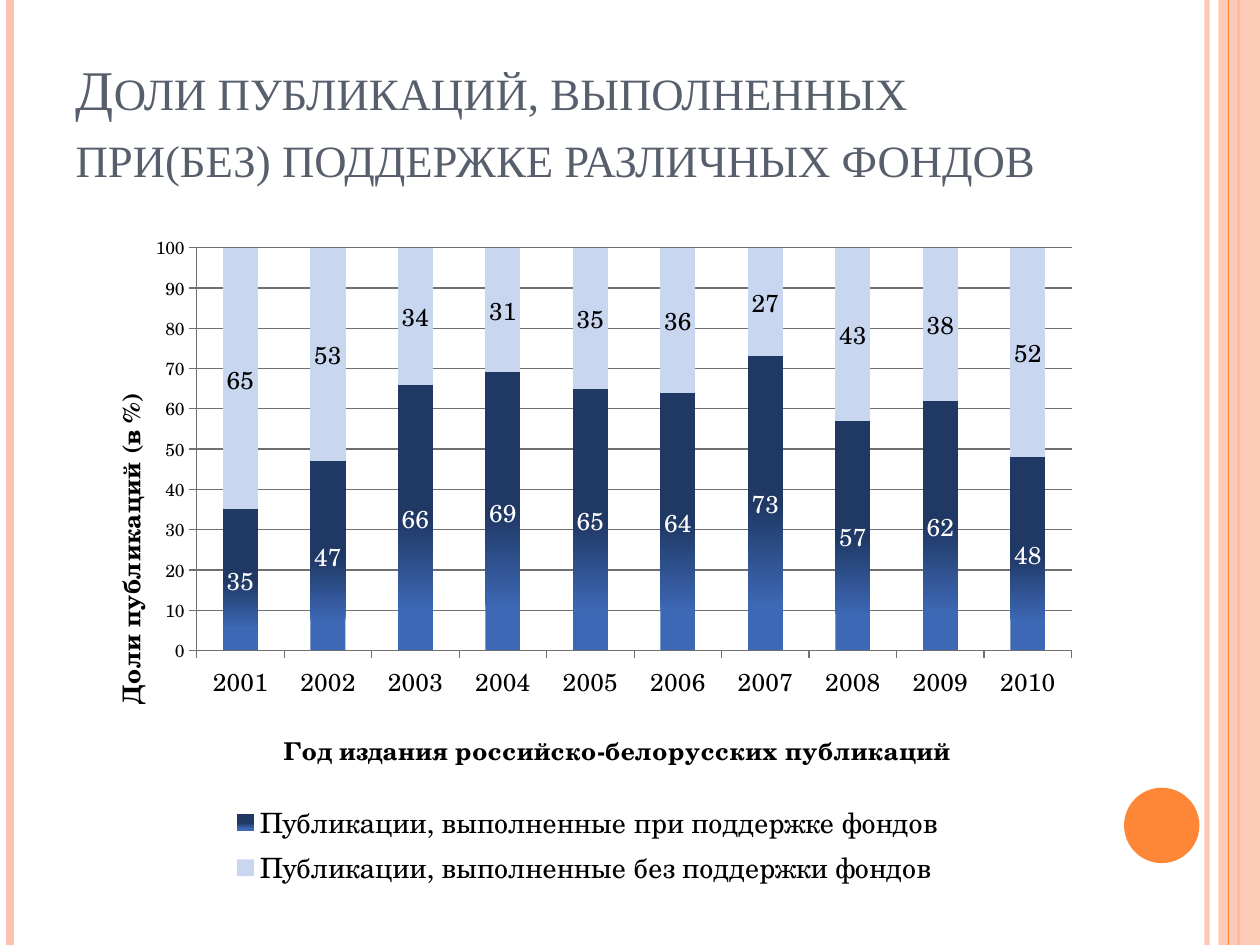
from pptx import Presentation
from pptx import util as u
from pptx.chart.data import CategoryChartData
from pptx.dml.color import RGBColor
from pptx.enum import chart as charts, shapes, text
from pptx.oxml import parse_xml
from pptx.oxml.ns import nsdecls, qn
from pptx.oxml.xmlchemy import OxmlElement

Cm, Pt = u.Cm, u.Pt
COLORS = {
    "peach": "FEC3AE", "orange": "FE8637", "title": "575F6D",
    "navy": "1F3864", "blue": "3D68B5", "pale": "C8D6F0",
    "grid": "707070", "black": "000000", "white": "FFFFFF",
}
CHART_FONT = "TeX Gyre Schola"
PAGE_HEIGHT = 19.05
STRIPES = [  # x in cm, colour, width in points, opacity in percent
    (24.33, "peach", 3, 93),
    (0.2, "peach", 4.5, 100),
    (24.97, "orange", 1.5, 100),
    (24.77, "orange", 0.75, 100),
]
SUPPORTED = [35, 47, 66, 69, 65, 64, 73, 57, 62, 48]


def rgb(name):
    return RGBColor.from_string(COLORS[name])


def set_opacity(shape, percent):
    for color in shape._element.spPr.iter(qn("a:srgbClr")):
        alpha = OxmlElement("a:alpha")
        alpha.set("val", str(percent * 1000))
        color.append(alpha)


def add_stripe(page, x, color, width, opacity):
    line = page.shapes.add_connector(
        shapes.MSO_CONNECTOR.STRAIGHT, Cm(x), 0, Cm(x), Cm(PAGE_HEIGHT))
    line.line.color.rgb = rgb(color)
    line.line.width = Pt(width)
    if opacity < 100:
        set_opacity(line, opacity)
    line._element.spPr.append(OxmlElement("a:effectLst"))


def add_plain_shape(page, kind, left, top, width, height, color):
    shape = page.shapes.add_shape(kind, Cm(left), Cm(top), Cm(width), Cm(height))
    shape.shadow.inherit = False
    shape.fill.solid()
    shape.fill.fore_color.rgb = rgb(color)
    shape.line.fill.background()
    return shape


def set_title(page, wording):
    title = page.shapes.title
    title.left, title.top, title.width, title.height = (
        Cm(1.27), Cm(0.76), Cm(20.75), Cm(3.18))
    frame = title.text_frame
    frame.word_wrap = True
    frame.auto_size = text.MSO_AUTO_SIZE.NONE
    frame.vertical_anchor = text.MSO_ANCHOR.BOTTOM
    para = frame.paragraphs[0]
    para.alignment = text.PP_ALIGN.LEFT
    span = para.add_run()
    span.text = wording
    style_font(span.font, 32, "title", name="Times New Roman")
    span.font._element.set("cap", "small")


def style_font(font, size, color="black", bold=False, name=CHART_FONT):
    font.name, font.size, font.bold = name, Pt(size), bold
    font.color.rgb = rgb(color)


def place(element, index, inner=False, **fractions):
    """Give a chart part a manual layout in fractions of the chart."""
    for old in element.findall(qn("c:layout")):
        element.remove(old)
    target = '<c:layoutTarget val="inner"/>' if inner else ""
    modes = "".join(f'<c:{key}Mode val="edge"/>' for key in "xy")
    values = "".join(f'<c:{key} val="{val}"/>' for key, val in fractions.items())
    element.insert(index, parse_xml(
        f'<c:layout {nsdecls("c")}><c:manualLayout>{target}{modes}{values}'
        "</c:manualLayout></c:layout>"))


def style_axis(axis, size, wording, x, y):
    axis.major_tick_mark = charts.XL_TICK_MARK.OUTSIDE
    axis.minor_tick_mark = charts.XL_TICK_MARK.NONE
    axis.format.line.color.rgb = rgb("grid")
    style_font(axis.tick_labels.font, size)
    span = axis.axis_title.text_frame.paragraphs[0].add_run()
    span.text = wording
    style_font(span.font, 14, bold=True)
    place(axis.axis_title._element, 1, x=x, y=y)


def style_series(series, label_color):
    labels = series.data_labels
    labels.show_value = True
    labels.position = charts.XL_LABEL_POSITION.CENTER
    style_font(labels.font, 14, label_color)


def add_share_chart(page):
    data = CategoryChartData()
    data.categories = [str(year) for year in range(2001, 2011)]
    data.add_series("Публикации, выполненные при поддержке фондов", SUPPORTED)
    data.add_series("Публикации, выполненные без поддержки фондов",
                    [100 - share for share in SUPPORTED])
    chart = page.shapes.add_chart(
        charts.XL_CHART_TYPE.COLUMN_STACKED,
        Cm(1.27), Cm(4.45), Cm(20.75), Cm(13.54), data).chart
    chart.has_title = False
    style_font(chart.font, 10)
    place(chart._chartSpace.chart.plotArea, 0, inner=True,
          x=0.13, y=0.04, w=0.85, h=0.6)

    plot = chart.plots[0]
    plot.gap_width, plot.overlap, plot.vary_by_categories = 150, 100, False
    supported, unsupported = plot.series
    style_series(supported, "white")
    style_series(unsupported, "black")
    fill = supported.format.fill
    fill.gradient()
    fill.gradient_angle = 90
    for stop, color, position in zip(
            fill.gradient_stops, ("blue", "navy"), (0.15, 0.5)):
        stop.color.rgb, stop.position = rgb(color), position
    unsupported.format.fill.solid()
    unsupported.format.fill.fore_color.rgb = rgb("pale")

    style_axis(chart.category_axis, 14,
               "Год издания российско-белорусских публикаций", 0.21, 0.75)
    shares = chart.value_axis
    style_axis(shares, 10, "Доли публикаций (в %)", 0.04, 0.25)
    shares.minimum_scale, shares.maximum_scale, shares.major_unit = 0, 100, 10
    shares.has_major_gridlines = True
    shares.major_gridlines.format.line.color.rgb = rgb("grid")

    chart.has_legend = True
    legend = chart.legend
    legend.position = charts.XL_LEGEND_POSITION.BOTTOM
    legend.include_in_layout = False
    style_font(legend.font, 16)
    place(legend._element, 1, x=0.15, y=0.86, w=0.72, h=0.14)


def main():
    deck = Presentation()
    deck.slide_width, deck.slide_height = Cm(25.4), Cm(PAGE_HEIGHT)
    page = deck.slides.add_slide(deck.slide_layouts.get_by_name("Title Only"))
    for stripe in STRIPES[:3]:
        add_stripe(page, *stripe)
    band = add_plain_shape(page, shapes.MSO_SHAPE.RECTANGLE,
                           24.56, 0, 0.84, PAGE_HEIGHT, "peach")
    set_opacity(band, 87)
    add_stripe(page, *STRIPES[3])
    add_plain_shape(page, shapes.MSO_SHAPE.OVAL, 22.66, 15.88, 1.52, 1.52, "orange")
    set_title(page, "Доли публикаций, выполненных при(без) "
                    "поддержке различных фондов")
    add_share_chart(page)
    deck.save("out.pptx")


if __name__ == "__main__":
    main()
